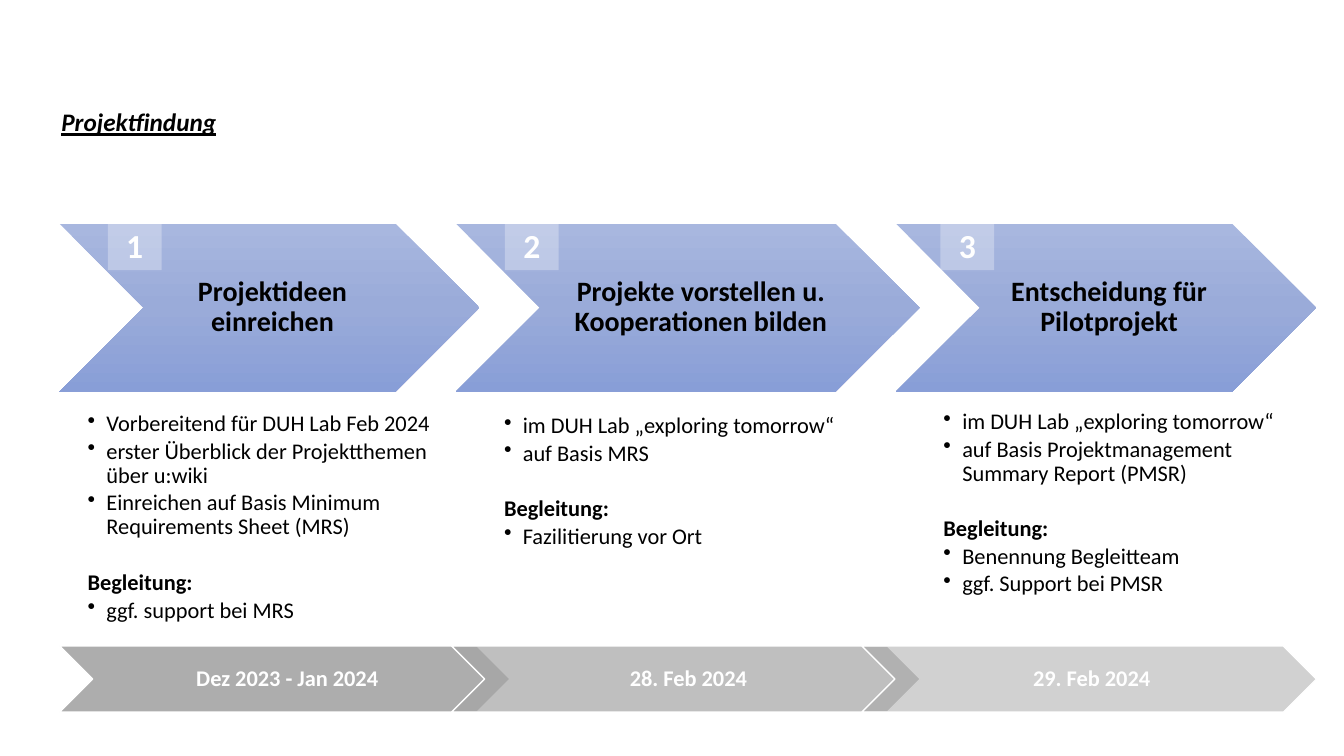
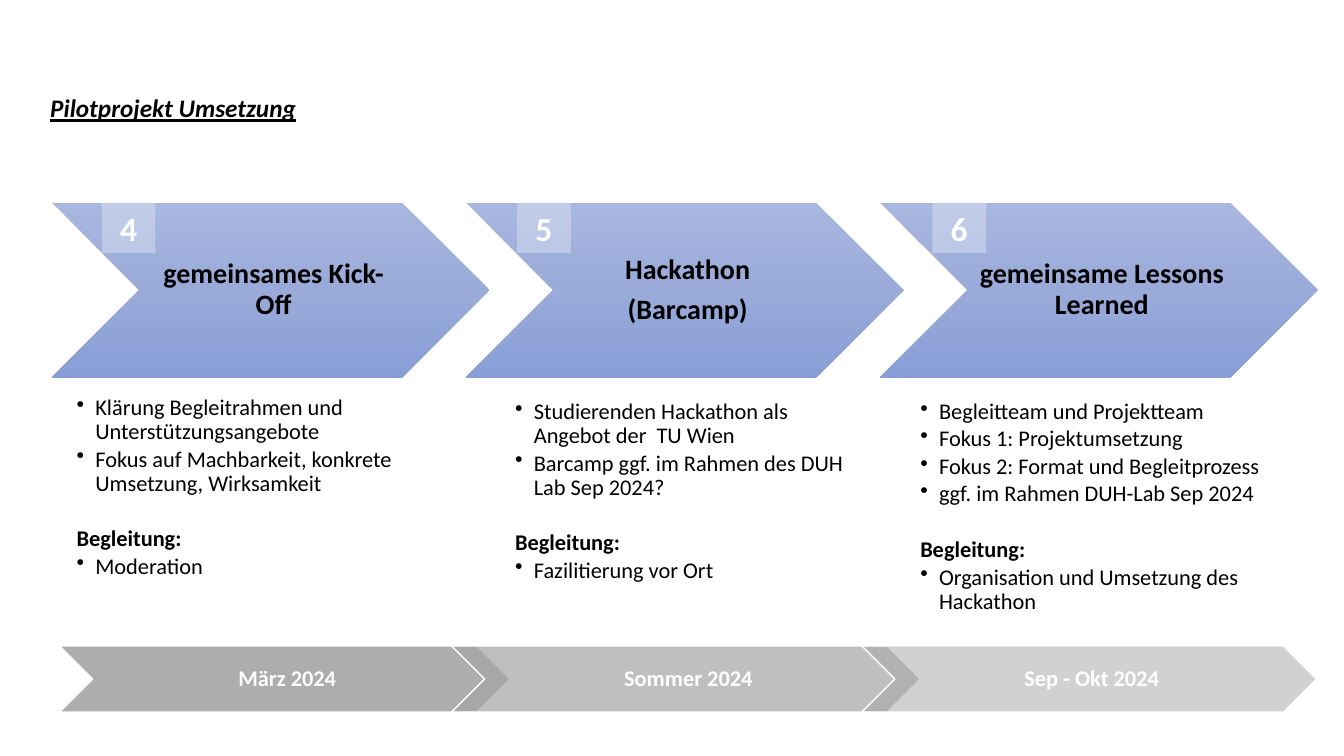
import copy

import lxml.etree
import pptx
import pptx.dml.color
import pptx.enum.shapes
import pptx.enum.text
import pptx.oxml.ns
import pptx.util

SHAPE = pptx.enum.shapes.MSO_SHAPE
ALIGN = pptx.enum.text.PP_ALIGN
ANCHOR = pptx.enum.text.MSO_ANCHOR
qn = pptx.oxml.ns.qn

SUPPORT = "Begleitung:"


def color(hex_code):
    return pptx.dml.color.RGBColor.from_string(hex_code)


class Deck:
    """Holds the style, an 80 x 45 grid of square cells and the current slide."""

    COLUMNS = 80
    FONT = "Calibri"
    DARK, LIGHT, GREY = "000000", "FFFFFF", "A5A5A5"
    STEP_GRADIENT = ("A8B7DF", "9AABD9", "889ED7")
    PERIOD_OPACITY = (90, 70, 50)
    HEADING_INSETS = (0.54, 0.18, 0.18, 0.18)
    PERIOD_INSETS = (0.42, 0.12, 0.12, 0.12)

    def __init__(self):
        self.presentation = pptx.Presentation()
        self.presentation.slide_width = pptx.util.Inches(13.33)
        self.presentation.slide_height = pptx.util.Inches(7.5)
        self.cell = self.presentation.slide_width / self.COLUMNS
        self.slide = None

    def new_slide(self):
        blank = self.presentation.slide_layouts[6]
        self.slide = self.presentation.slides.add_slide(blank)

    def grid(self, *cells):
        return [pptx.util.Emu(round(count * self.cell)) for count in cells]

    # Basic parts
    def shape(self, preset, *box):
        shape = self.slide.shapes.add_shape(preset, *self.grid(*box))
        shape.shadow.inherit = False
        shape.line.fill.background()
        return shape

    def solid(self, shape, hex_code, opacity):
        shape.fill.solid()
        shape.fill.fore_color.rgb = color(hex_code)
        tint = shape._element.spPr.find(qn("a:solidFill"))[0]
        lxml.etree.SubElement(tint, qn("a:alpha"), val=str(opacity * 1000))

    def gradient(self, shape, hex_codes):
        shape.fill.gradient()
        shape.fill.gradient_angle = 270
        stops = shape._element.spPr.find(".//" + qn("a:gsLst"))
        stops.insert(1, copy.deepcopy(stops[0]))
        for index, (stop, code) in enumerate(zip(shape.fill.gradient_stops, hex_codes)):
            stop.position = index / (len(hex_codes) - 1)
            stop.color.rgb = color(code)

    def frame(self, shape, insets, anchor=ANCHOR.TOP):
        frame = shape.text_frame
        frame.word_wrap = True
        frame.vertical_anchor = anchor
        (frame.margin_left, frame.margin_top,
         frame.margin_right, frame.margin_bottom) = self.grid(*insets)
        return frame

    def set_lines(self, frame, lines, size, hex_code, bold=True, align=ALIGN.CENTER,
                  spacing=0.9, after=0):
        paragraphs = []
        for index, line in enumerate(lines):
            paragraph = frame.add_paragraph() if index else frame.paragraphs[0]
            paragraph.text = line
            paragraph.alignment = align
            paragraph.line_spacing = spacing
            if index < len(lines) - 1:
                paragraph.space_after = pptx.util.Pt(after)
            paragraphs.append(paragraph)
            self.style(paragraph, size, hex_code, bold)
        return paragraphs

    def style(self, paragraph, size, hex_code, bold):
        font = paragraph.font
        font.name = self.FONT
        font.size = pptx.util.Pt(size)
        font.bold = bold
        font.color.rgb = color(hex_code)

    # Parts of the process slides
    def title(self, text, left, top):
        box = self.slide.shapes.add_textbox(*self.grid(left, top, 16, 2.4))
        box.text_frame.word_wrap = False
        title, = self.set_lines(box.text_frame, [text], 18, self.DARK,
                                align=ALIGN.LEFT, spacing=1.0)
        title.font.italic = True
        title.font.underline = True

    def step(self, heading, left, top, width, height, shift=0):
        arrow = self.shape(SHAPE.CHEVRON, left, top, width, height)
        self.gradient(arrow, self.STEP_GRADIENT)
        inset, *others = self.HEADING_INSETS
        frame = self.frame(arrow, (inset + shift, *others), ANCHOR.MIDDLE)
        self.set_lines(frame, heading, 20, self.DARK, after=7)

    def notes(self, topics, support, left, top, width, height):
        box = self.slide.shapes.add_textbox(*self.grid(left, top, width, height))
        frame = self.frame(box, (0, 0, 0, 0))
        lines = [*topics, SUPPORT, *support]
        paragraphs = self.set_lines(frame, lines, 16, self.DARK, bold=False,
                                    align=ALIGN.LEFT, after=2.4)
        hanging = self.grid(1.12)[0]
        for paragraph in paragraphs:
            properties = paragraph._p.get_or_add_pPr()
            properties.set("marL", str(hanging))
            properties.set("indent", str(-hanging))
            if paragraph.text == SUPPORT:
                paragraph.space_before = pptx.util.Pt(20)
                paragraph.font.bold = True
            else:
                bullet = lxml.etree.Element(qn("a:buChar"), char="•")
                properties.find(qn("a:defRPr")).addprevious(bullet)

    def badge(self, number, left, top):
        badge = self.shape(SHAPE.RECTANGLE, left, top, 3.2, 3)
        self.solid(badge, self.LIGHT, 30)
        frame = self.frame(badge, (0.6, 0.3, 0.6, 0.3), ANCHOR.MIDDLE)
        self.set_lines(frame, [str(number)], 24, self.LIGHT, spacing=1.0)

    def timeline(self, periods):
        left, overlap = 3.54, 3.48
        for period, width, opacity in zip(periods, (26.82, 27.9, 27.06), self.PERIOD_OPACITY):
            arrow = self.shape(SHAPE.CHEVRON, left, 38.46, width, 3.94)
            self.solid(arrow, self.GREY, opacity)
            arrow.line.color.rgb = color(self.LIGHT)
            arrow.line.width = pptx.util.Pt(1)
            frame = self.frame(arrow, self.PERIOD_INSETS, ANCHOR.MIDDLE)
            self.set_lines(frame, [period], 16, self.LIGHT)
            left += width - overlap

    def process(self, phase):
        self.new_slide()
        left, top, height = phase["arrows"]
        for step in phase["steps"]:
            self.step(step["heading"], left, top, step["width"], height, step.get("shift", 0))
            self.notes(step["topics"], step["support"], *step["notes"], phase["notes_height"])
            left += step["width"] - 1.4
        self.title(phase["title"], *phase["title_at"])
        self.timeline([step["period"] for step in phase["steps"]])
        for number, step in enumerate(phase["steps"], phase["first"]):
            self.badge(number, step["badge"], phase["badge_top"])


# Content; all lengths in grid cells, "notes" as left, top, width
FINDING = {
    "title": "Projektfindung", "title_at": (3.06, 6.06), "first": 1,
    "arrows": (3.54, 13.32, 10), "badge_top": 13.08, "notes_height": 12.96,
    "steps": [
        {"heading": ["Projektideen einreichen"], "width": 25, "badge": 6.42,
         "notes": (5.22, 24.54, 20.94), "period": "Dez 2023 - Jan 2024",
         "topics": ["Vorbereitend für DUH Lab Feb 2024",
                    "erster Überblick der Projektthemen über u:wiki",
                    "Einreichen auf Basis Minimum Requirements Sheet (MRS)"],
         "support": ["ggf. support bei MRS"]},
        {"heading": ["Projekte vorstellen u. Kooperationen bilden"], "width": 27.6,
         "shift": 1.2, "badge": 30.06,
         "notes": (30, 24.66, 20.04), "period": "28. Feb 2024",
         "topics": ["im DUH Lab „exploring tomorrow“", "auf Basis MRS"],
         "support": ["Fazilitierung vor Ort"]},
        {"heading": ["Entscheidung für Pilotprojekt"], "width": 25, "badge": 55.98,
         "notes": (56.16, 24.42, 20.04), "period": "29. Feb 2024",
         "topics": ["im DUH Lab „exploring tomorrow“",
                    "auf Basis Projektmanagement Summary Report (PMSR)"],
         "support": ["Benennung Begleitteam", "ggf. Support bei PMSR"]},
    ],
}

PILOT = {
    "title": "Pilotprojekt Umsetzung", "title_at": (2.4, 5.22), "first": 4,
    "arrows": (3.08, 12.06, 10.42), "badge_top": 12.06, "notes_height": 14.64,
    "steps": [
        {"heading": ["gemeinsames Kick-Off"], "width": 26.05, "badge": 6.06,
         "notes": (4.56, 23.58, 20.82), "period": "März 2024",
         "topics": ["Klärung Begleitrahmen und Unterstützungsangebote",
                    "Fokus auf Machbarkeit, konkrete Umsetzung, Wirksamkeit"],
         "support": ["Moderation"]},
        {"heading": ["Hackathon", "(Barcamp)"], "width": 26.05, "badge": 30.78,
         "notes": (30.66, 23.82, 20.82), "period": "Sommer 2024",
         "topics": ["Studierenden Hackathon als Angebot der  TU Wien",
                    "Barcamp ggf. im Rahmen des DUH Lab Sep 2024?"],
         "support": ["Fazilitierung vor Ort"]},
        {"heading": ["gemeinsame Lessons Learned"], "width": 26.05, "badge": 55.5,
         "notes": (54.78, 23.82, 20.82), "period": "Sep - Okt 2024",
         "topics": ["Begleitteam und Projektteam", "Fokus 1: Projektumsetzung",
                    "Fokus 2: Format und Begleitprozess",
                    "ggf. im Rahmen DUH-Lab Sep 2024"],
         "support": ["Organisation und Umsetzung des Hackathon"]},
    ],
}


def main():
    deck = Deck()
    for phase in (FINDING, PILOT):
        deck.process(phase)
    deck.presentation.save("out.pptx")


if __name__ == "__main__":
    main()
